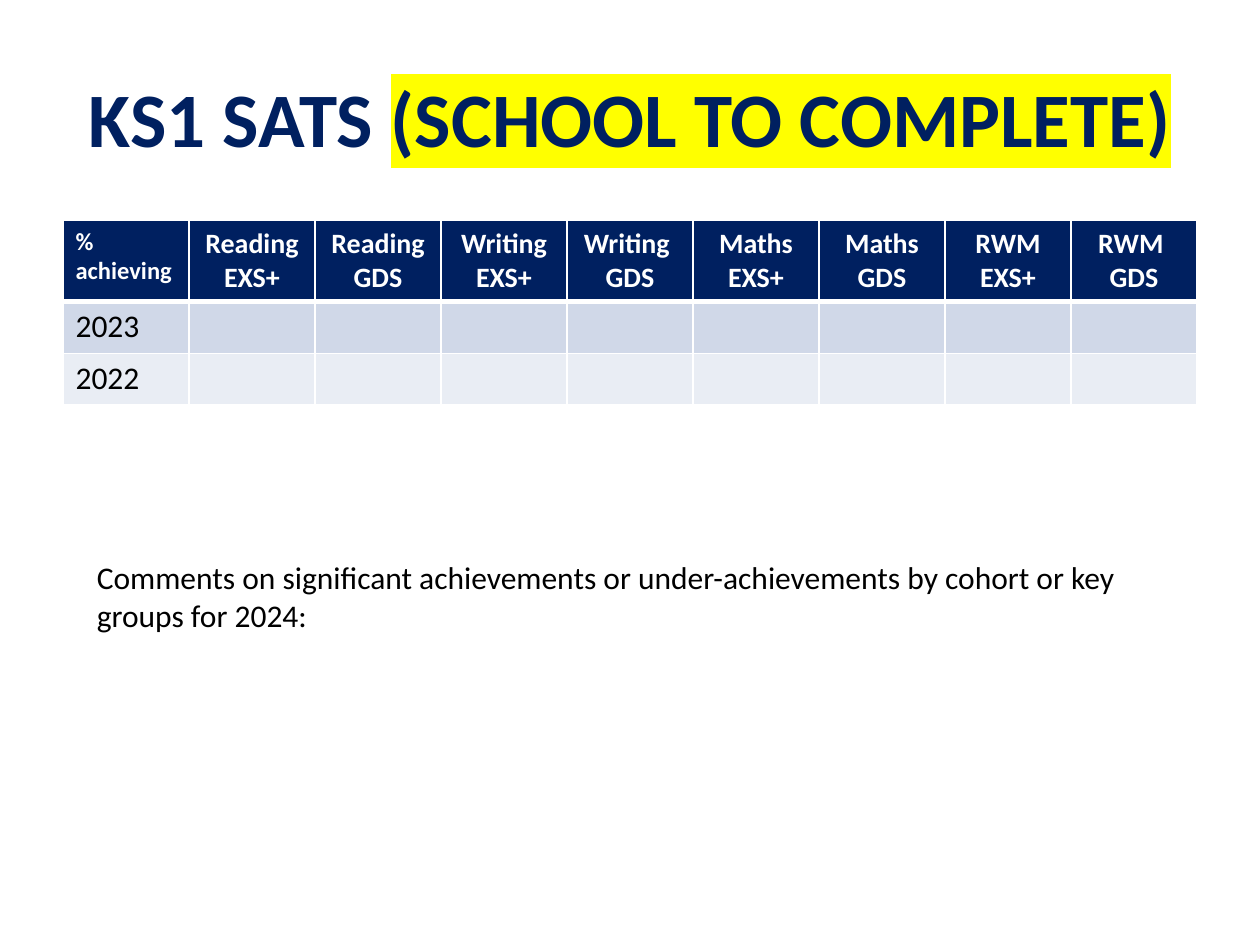
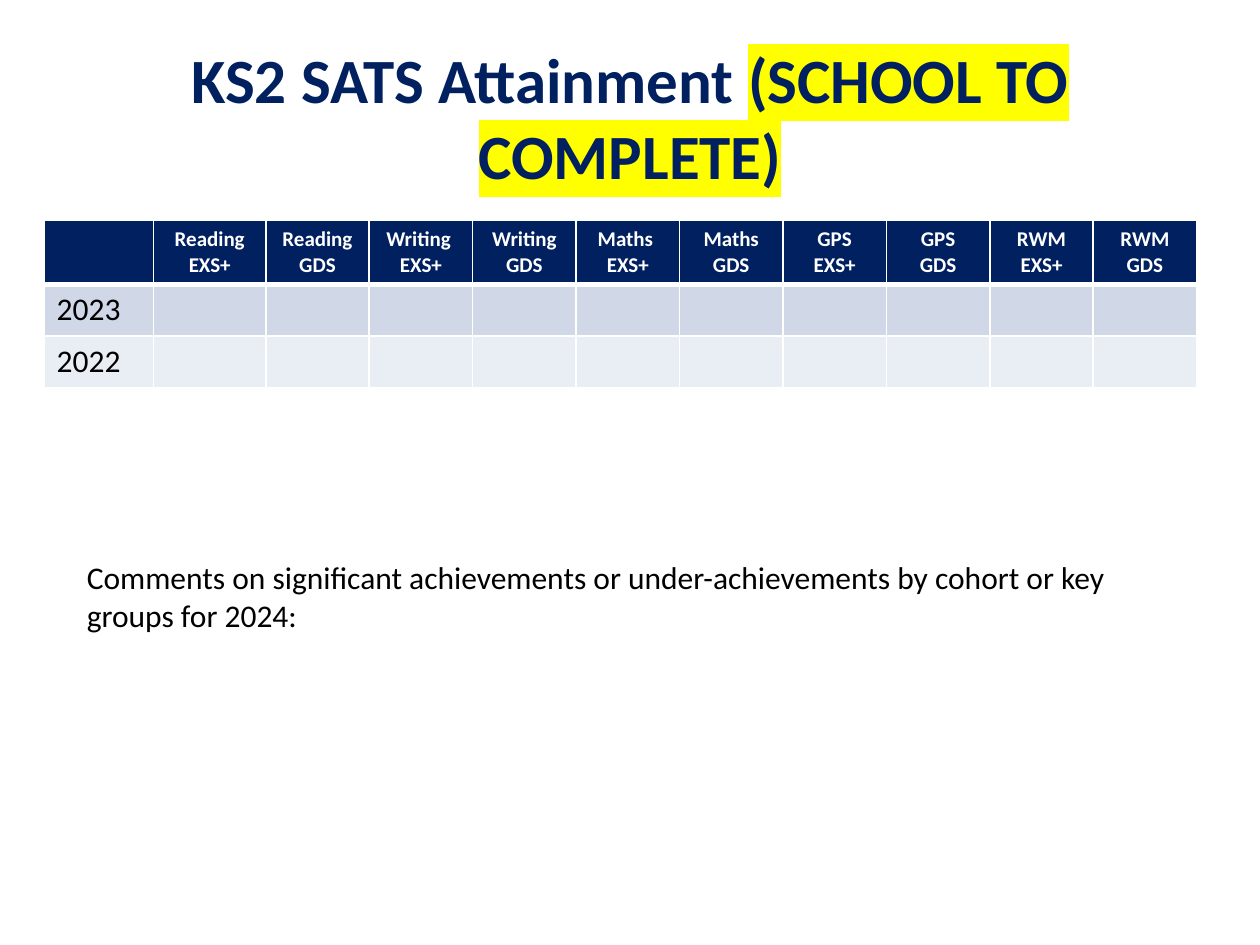
from dataclasses import dataclass

import pptx
import pptx.dml.color
import pptx.enum.text
import pptx.oxml
import pptx.oxml.ns
import pptx.presentation
import pptx.slide
import pptx.table
import pptx.text.text
import pptx.util

PP_ALIGN = pptx.enum.text.PP_ALIGN


@dataclass(frozen=True)
class Theme:
    font: str = "Calibri"
    navy: str = "002060"
    white: str = "FFFFFF"
    black: str = "000000"
    highlight: str = "FFFF00"
    bands: tuple[str, ...] = ("D0D8E8", "E9EDF4")
    body_size: int = 18
    corner_size: int = 14
    thin_rule: int = 1
    thick_rule: int = 3


@dataclass(frozen=True)
class Page:
    width: float = 10
    height: float = 7.5
    right_edge: float = 9.5
    title_left: float = 0.5
    title_top: float = 0.3
    title_height: float = 1.25
    table_top: float = 1.75
    year_row: float = 0.41
    comments_top: float = 4.38
    comments_height: float = 2.52


@dataclass(frozen=True)
class Results:
    subject: str
    title_size: int
    corner: str
    headings: tuple[str, ...]
    heading_size: int
    heading_row: float
    table_left: float
    lead_columns: tuple[float, ...]
    comments_left: float


THEME = Theme()
PAGE = Page()
PROMPT = "(SCHOOL TO COMPLETE)"
YEARS = ("2023", "2022")
COMMENTS = (
    "Comments on significant achievements or under-achievements "
    "by cohort or key groups for 2024:"
)

KEY_STAGES = (
    Results(
        subject="KS1 SATS ",
        title_size=44,
        corner="%\nachieving",
        headings=(
            "Reading\nEXS+", "Reading GDS", "Writing\nEXS+", "Writing \nGDS",
            "Maths\nEXS+", "Maths\nGDS", "RWM\nEXS+", "RWM \nGDS",
        ),
        heading_size=16,
        heading_row=0.63,
        table_left=0.5,
        lead_columns=(1,),
        comments_left=0.67,
    ),
    Results(
        subject="KS2 SATS Attainment ",
        title_size=36,
        corner="",
        headings=(
            "Reading\nEXS+", "Reading GDS", "Writing \nEXS+", "Writing\nGDS",
            "Maths \nEXS+", "Maths GDS", "GPS\nEXS+", "GPS\nGDS",
            "RWM\nEXS+", "RWM\nGDS",
        ),
        heading_size=12,
        heading_row=0.5,
        table_left=0.35,
        lead_columns=(0.87, 0.89),
        comments_left=0.59,
    ),
)


def rgb(colour: str) -> pptx.dml.color.RGBColor:
    return pptx.dml.color.RGBColor.from_string(colour)


def format_text(
    frame: pptx.text.text.TextFrame,
    size: int,
    colour: str,
    bold: bool = False,
    align: PP_ALIGN = PP_ALIGN.LEFT,
) -> None:
    for paragraph in frame.paragraphs:
        paragraph.alignment = align
        for run in paragraph.runs:
            run.font.name = THEME.font
            run.font.size = pptx.util.Pt(size)
            run.font.bold = bold
            run.font.color.rgb = rgb(colour)


def highlight(run: pptx.text.text._Run) -> None:
    mark = pptx.oxml.parse_xml(
        f'<a:highlight {pptx.oxml.ns.nsdecls("a")}>'
        f'<a:srgbClr val="{THEME.highlight}"/></a:highlight>'
    )
    run.font._element.find(pptx.oxml.ns.qn("a:solidFill")).addnext(mark)


def rule_cell(cell: pptx.table._Cell, top: int, bottom: int) -> None:
    properties = cell._tc.get_or_add_tcPr()
    widths = {"L": THEME.thin_rule, "R": THEME.thin_rule, "T": top, "B": bottom}
    for side, width in widths.items():
        properties.append(pptx.oxml.parse_xml(
            f'<a:ln{side} {pptx.oxml.ns.nsdecls("a")} w="{pptx.util.Pt(width)}">'
            f'<a:solidFill><a:srgbClr val="{THEME.white}"/></a:solidFill>'
            f'</a:ln{side}>'
        ))


def fill_cell(cell: pptx.table._Cell, colour: str) -> None:
    cell.fill.solid()
    cell.fill.fore_color.rgb = rgb(colour)


def add_title(slide: pptx.slide.Slide, results: Results) -> None:
    title = slide.shapes.title
    title.left = pptx.util.Inches(PAGE.title_left)
    title.top = pptx.util.Inches(PAGE.title_top)
    title.width = pptx.util.Inches(PAGE.right_edge - PAGE.title_left)
    title.height = pptx.util.Inches(PAGE.title_height)
    frame = title.text_frame
    frame.auto_size = pptx.enum.text.MSO_AUTO_SIZE.NONE
    frame.vertical_anchor = pptx.enum.text.MSO_ANCHOR.MIDDLE
    frame.text = results.subject
    prompt = frame.paragraphs[0].add_run()
    prompt.text = PROMPT
    format_text(frame, results.title_size, THEME.navy, True, PP_ALIGN.CENTER)
    highlight(prompt)


def add_results_table(slide: pptx.slide.Slide, results: Results) -> None:
    column_count = 1 + len(results.headings)
    width = PAGE.right_edge - results.table_left
    equal_count = column_count - len(results.lead_columns)
    equal_width = (width - sum(results.lead_columns)) / equal_count
    column_widths = results.lead_columns + (equal_width,) * equal_count
    row_heights = (results.heading_row,) + (PAGE.year_row,) * len(YEARS)

    table = slide.shapes.add_table(
        len(row_heights), column_count,
        pptx.util.Inches(results.table_left), pptx.util.Inches(PAGE.table_top),
        pptx.util.Inches(width), pptx.util.Inches(sum(row_heights)),
    ).table
    for column, column_width in zip(table.columns, column_widths):
        column.width = pptx.util.Inches(column_width)
    for row, row_height in zip(table.rows, row_heights):
        row.height = pptx.util.Inches(row_height)

    for index, heading in enumerate((results.corner,) + results.headings):
        cell = table.cell(0, index)
        cell.text_frame.text = heading
        if index:
            format_text(cell.text_frame, results.heading_size, THEME.white,
                        True, PP_ALIGN.CENTER)
        else:
            format_text(cell.text_frame, THEME.corner_size, THEME.white, True)
        rule_cell(cell, THEME.thin_rule, THEME.thick_rule)
        fill_cell(cell, THEME.navy)

    for row_index, (year, band) in enumerate(zip(YEARS, THEME.bands), start=1):
        top = THEME.thick_rule if row_index == 1 else THEME.thin_rule
        for cell in table.rows[row_index].cells:
            rule_cell(cell, top, THEME.thin_rule)
            fill_cell(cell, band)
        year_cell = table.cell(row_index, 0)
        year_cell.text_frame.text = year
        format_text(year_cell.text_frame, THEME.body_size, THEME.black)


def add_comments(slide: pptx.slide.Slide, results: Results) -> None:
    comments = slide.shapes.add_textbox(
        pptx.util.Inches(results.comments_left),
        pptx.util.Inches(PAGE.comments_top),
        pptx.util.Inches(PAGE.right_edge - results.comments_left),
        pptx.util.Inches(PAGE.comments_height),
    ).text_frame
    comments.word_wrap = True
    comments.text = COMMENTS
    format_text(comments, THEME.body_size, THEME.black)


def add_results_slide(
    deck: pptx.presentation.Presentation, results: Results
) -> None:
    slide = deck.slides.add_slide(deck.slide_layouts.get_by_name("Title Only"))
    add_title(slide, results)
    add_results_table(slide, results)
    add_comments(slide, results)


def main() -> None:
    deck = pptx.Presentation()
    deck.slide_width = pptx.util.Inches(PAGE.width)
    deck.slide_height = pptx.util.Inches(PAGE.height)
    for results in KEY_STAGES:
        add_results_slide(deck, results)
    deck.save("out.pptx")


if __name__ == "__main__":
    main()
